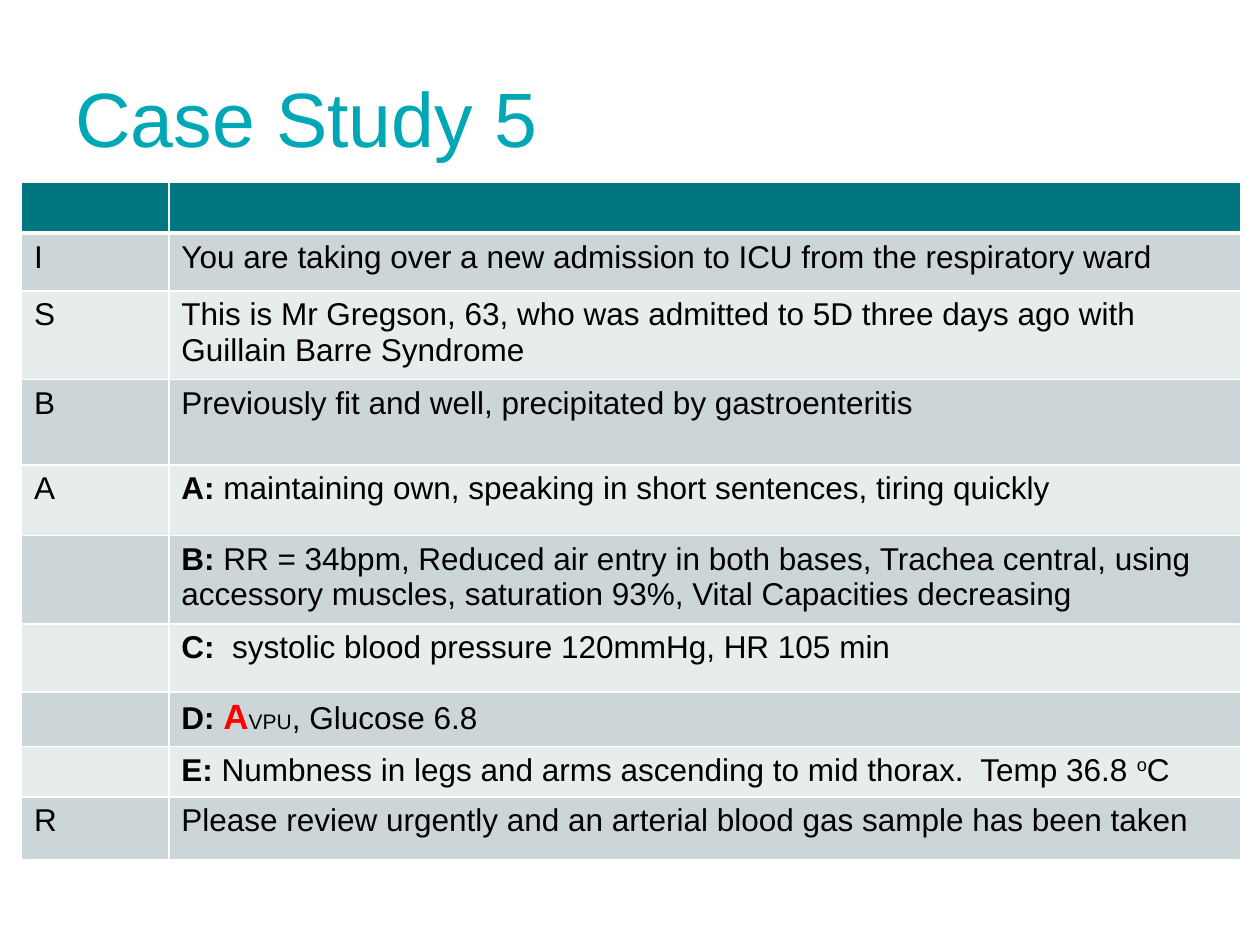
import pptx
import pptx.dml.color
import pptx.enum.text
import pptx.oxml
import pptx.oxml.ns
import pptx.util

RGBColor = pptx.dml.color.RGBColor
Inches = pptx.util.Inches
TURQUOISE = RGBColor(0x00, 0xA7, 0xB5)
TEAL = RGBColor(0x00, 0x76, 0x81)
DARK_BAND = RGBColor(0xCC, 0xD6, 0xD8)
LIGHT_BAND = RGBColor(0xE7, 0xEC, 0xED)
BLACK = RGBColor(0, 0, 0)
RED = RGBColor(0xFF, 0, 0)

BOLD = {"bold": True}
COLUMNS = [1.17, 8.51]
# Row height, letter, runs of the handover text with their format
ROWS = [
    (0.39, "", []),
    (0.46, "I", [("You are taking over a new admission to ICU from the respiratory ward", {})]),
    (0.68, "S", [("This is Mr Gregson, 63, who was admitted to 5D three days ago with "
                  "Guillain Barre Syndrome", {})]),
    (0.68, "B", [("Previously fit and well, precipitated by gastroenteritis", {})]),
    (0.56, "A", [("A:", BOLD),
                 (" maintaining own, speaking in short sentences, tiring quickly", {})]),
    (0.5, "", [("B:", BOLD),
               (" RR = 34bpm, Reduced air entry in both bases, Trachea central, using "
                "accessory muscles, saturation 93%, Vital Capacities decreasing", {})]),
    (0.54, "", [("C: ", BOLD), (" systolic blood pressure 120mmHg, HR 105 min", {})]),
    (0.39, "", [("D: ", BOLD), ("A", {"bold": True, "size": 20, "color": RED}),
                ("VPU", {"size": 12}), (", Glucose 6.8", {})]),
    (0.39, "", [("E:", BOLD),
                (" Numbness in legs and arms ascending to mid thorax.  Temp 36.8 ", {}),
                ("o", {"baseline": 30}), ("C", {})]),
    (0.5, "R", [("Please review urgently and an arterial blood gas sample has been taken", {})]),
]


def add_run(p, text, size=18, color=BLACK, bold=False, baseline=0):
    r = p.add_run()
    r.text = text
    r.font.name = "Arial"
    r.font.size = pptx.util.Pt(size)
    r.font.bold = bold
    r.font.color.rgb = color
    if baseline:
        r._r.get_or_add_rPr().set("baseline", str(baseline * 1000))


def set_borders(cell, bottom=1):
    """Draw white cell borders, 1 pt wide except for the bottom one."""
    tcPr = cell._tc.get_or_add_tcPr()
    widths = {"lnL": 1, "lnR": 1, "lnT": 1, "lnB": bottom}
    for i, (tag, width) in enumerate(widths.items()):
        tcPr.insert(i, pptx.oxml.parse_xml(
            f'<a:{tag} {pptx.oxml.ns.nsdecls("a")} w="{width * 12700}">'
            f'<a:solidFill><a:srgbClr val="FFFFFF"/></a:solidFill></a:{tag}>'))


def add_title(slide, text, left, top, width, height):
    box = slide.shapes.add_textbox(*map(Inches, (left, top, width, height)))
    tf = box.text_frame
    tf.word_wrap = True
    tf.vertical_anchor = pptx.enum.text.MSO_ANCHOR.MIDDLE
    add_run(tf.paragraphs[0], text, size=44, color=TURQUOISE)


def add_handover_table(slide, left, top):
    height = sum(row[0] for row in ROWS)
    frame = slide.shapes.add_table(len(ROWS), len(COLUMNS), Inches(left), Inches(top),
                                   Inches(sum(COLUMNS)), Inches(height))
    table = frame.table
    for column, width in zip(table.columns, COLUMNS):
        column.width = Inches(width)
    for i, (row_height, letter, runs) in enumerate(ROWS):
        table.rows[i].height = Inches(row_height)
        band = TEAL if i == 0 else DARK_BAND if i % 2 else LIGHT_BAND
        letter_runs = [(letter, {})] if letter else []
        for cell, cell_runs in zip(table.rows[i].cells, (letter_runs, runs)):
            cell.fill.solid()
            cell.fill.fore_color.rgb = band
            set_borders(cell, bottom=1 if i else 3)
            p = cell.text_frame.paragraphs[0]
            for text, style in cell_runs:
                add_run(p, text, **style)


def main():
    prs = pptx.Presentation()
    prs.slide_width, prs.slide_height = Inches(10), Inches(7.5)
    slide = prs.slides.add_slide(prs.slide_layouts[6])
    add_title(slide, "Case Study 5", 0.5, 0.3, 9, 1.25)
    add_handover_table(slide, 0.17, 1.45)
    prs.save("out.pptx")


if __name__ == "__main__":
    main()
